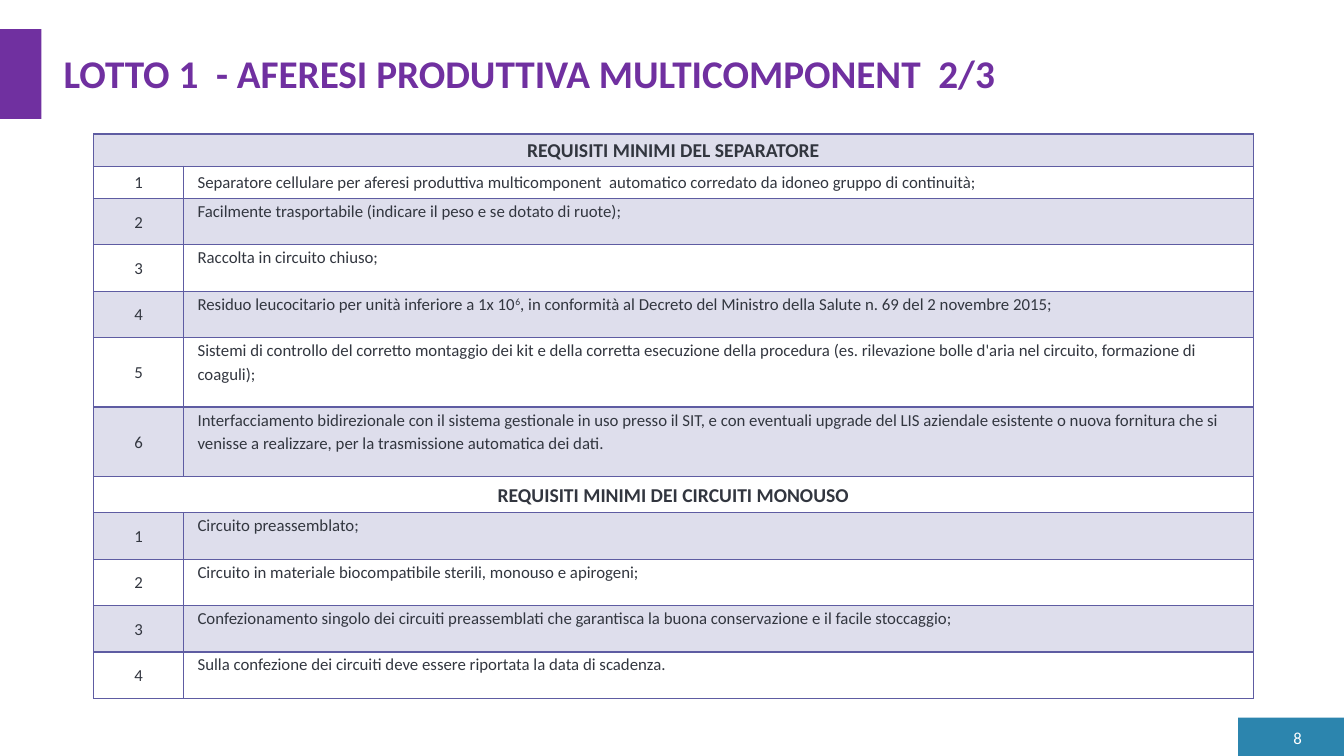
"""Builds the slide with the minimum requirements of lot 1."""
from dataclasses import dataclass

from lxml import etree
from pptx import Presentation
from pptx import util as u
from pptx.dml.color import RGBColor
from pptx.enum import shapes, text
from pptx.oxml.ns import qn

LEFT, CENTER, RIGHT = text.PP_ALIGN.LEFT, text.PP_ALIGN.CENTER, text.PP_ALIGN.RIGHT
TOP, MIDDLE = text.MSO_ANCHOR.TOP, text.MSO_ANCHOR.MIDDLE


@dataclass(frozen=True)
class Theme:
    font: str = "Calibri"
    accent: str = "7030A0"
    footer: str = "2C85AE"
    ink: str = "32363F"
    grid: str = "5E5CA2"
    white: str = "FFFFFF"
    band_alpha: int = 20
    title_size: int = 28
    heading_size: int = 14
    body_size: int = 12


SECTIONS = [
    ("REQUISITI MINIMI DEL SEPARATORE", 0.32, [
        ("Separatore cellulare per aferesi produttiva multicomponent  automatico corredato da idoneo gruppo di continuità;", 0.32),
        ("Facilmente trasportabile (indicare il peso e se dotato di ruote);", 0.46),
        ("Raccolta in circuito chiuso;", 0.46),
        ("Residuo leucocitario per unità inferiore a 1x 10^6^, in conformità al Decreto del Ministro della Salute n. 69 del 2 novembre 2015;", 0.46),
        ("Sistemi di controllo del corretto montaggio dei kit e della corretta esecuzione della procedura (es. rilevazione bolle d'aria nel circuito, formazione di coaguli);", 0.69),
        ("Interfacciamento bidirezionale con il sistema gestionale in uso presso il SIT, e con eventuali upgrade del LIS aziendale esistente o nuova fornitura che si venisse a realizzare, per la trasmissione automatica dei dati.", 0.69),
    ]),
    ("REQUISITI MINIMI DEI CIRCUITI MONOUSO", 0.36, [
        ("Circuito preassemblato;", 0.46),
        ("Circuito in materiale biocompatibile sterili, monouso e apirogeni;", 0.46),
        ("Confezionamento singolo dei circuiti preassemblati che garantisca la buona conservazione e il facile stoccaggio;", 0.46),
        ("Sulla confezione dei circuiti deve essere riportata la data di scadenza.", 0.46),
    ]),
]


def write(frame, content, *, font, size, color, bold=False, align=LEFT,
          spacing=1.0, after=0, indent=0):
    """Fill a frame with one paragraph; text between carets is superscript."""
    paragraph = frame.paragraphs[0]
    paragraph.alignment = align
    paragraph.line_spacing = spacing
    paragraph.space_before = u.Pt(0)
    paragraph.space_after = u.Pt(after)
    paragraph._p.get_or_add_pPr().set("marL", str(u.Inches(indent)))
    for position, piece in enumerate(content.split("^")):
        run = paragraph.add_run()
        run.text = piece
        run.font.name = font
        run.font.size = u.Pt(size)
        run.font.bold = bold
        run.font.color.rgb = RGBColor.from_string(color)
        if position % 2:
            run._r.get_or_add_rPr().set("baseline", "30000")


class SlideBuilder:
    """Holds the theme and the current slide and adds its elements."""

    def __init__(self, deck, theme):
        self.theme = theme
        self.slide = deck.slides.add_slide(deck.slide_layouts[5])

    def block(self, left, top, width, height, color):
        """Add a plain filled rectangle."""
        rectangle = self.slide.shapes.add_shape(
            shapes.MSO_SHAPE.RECTANGLE, *map(u.Inches, (left, top, width, height)))
        rectangle.shadow.inherit = False
        rectangle.fill.solid()
        rectangle.fill.fore_color.rgb = RGBColor.from_string(color)
        rectangle.line.fill.background()

    def title(self, content, left, top, width, height):
        """Place and format the title placeholder."""
        heading = self.slide.shapes.title
        heading.left, heading.top, heading.width, heading.height = map(
            u.Inches, (left, top, width, height))
        heading.text_frame.vertical_anchor = TOP
        heading.text_frame.word_wrap = True
        heading.text_frame.auto_size = text.MSO_AUTO_SIZE.SHAPE_TO_FIT_TEXT
        write(heading.text_frame, content, font=self.theme.font, bold=True,
              size=self.theme.title_size, color=self.theme.accent)

    def page_number(self, content, left, top, width, height):
        """Add the page number."""
        number = self.slide.shapes.add_textbox(
            *map(u.Inches, (left, top, width, height))).text_frame
        number.word_wrap = True
        number.vertical_anchor = MIDDLE
        write(number, content, font=self.theme.font, align=RIGHT,
              size=self.theme.body_size, color=self.theme.white)

    def cell(self, cell, content, banded, anchor=MIDDLE, **style):
        """Format one table cell with its fill, borders and text."""
        cell.margin_left = cell.margin_right = u.Inches(0.07)
        cell.margin_top = cell.margin_bottom = 0
        cell.vertical_anchor = anchor
        self.cell_box(cell, banded)
        style = {"size": self.theme.body_size, "spacing": 1.07, "after": 8} | style
        write(cell.text_frame, content, font=self.theme.font,
              color=self.theme.ink, **style)

    def cell_box(self, cell, banded):
        """Set the fill and the four borders of a cell."""
        properties = cell._tc.get_or_add_tcPr()
        if banded:
            cell.fill.solid()
            cell.fill.fore_color.rgb = RGBColor.from_string(self.theme.grid)
            tint = properties.find(".//" + qn("a:srgbClr"))
            etree.SubElement(tint, qn("a:alpha"), val=str(self.theme.band_alpha * 1000))
        else:
            cell.fill.background()
        for order, side in enumerate("LRTB"):
            border = etree.Element(qn(f"a:ln{side}"), w=str(u.Pt(1)))
            stroke = etree.SubElement(border, qn("a:solidFill"))
            etree.SubElement(stroke, qn("a:srgbClr"), val=self.theme.grid)
            properties.insert(order, border)

    def requirements(self, sections, left, top, columns):
        """Add the table of numbered requirements under their headings."""
        rows = []
        for heading, height, items in sections:
            rows.append((None, heading, height))
            rows += [(n, item, tall) for n, (item, tall) in enumerate(items, 1)]
        total = sum(height for *_, height in rows)
        table = self.slide.shapes.add_table(
            len(rows), len(columns),
            *map(u.Inches, (left, top, sum(columns), total))).table
        table.first_row = table.horz_banding = False
        for column, width in zip(table.columns, columns):
            column.width = u.Inches(width)
        for index, (number, content, height) in enumerate(rows):
            table.rows[index].height = u.Inches(height)
            banded = index % 2 == 0
            label, detail = table.cell(index, 0), table.cell(index, 1)
            if number is None:
                label.merge(detail)
                self.cell(label, content, banded, align=CENTER, bold=True,
                          size=self.theme.heading_size)
                self.cell_box(detail, banded)
                continue
            self.cell(label, str(number), banded, align=CENTER)
            if height < 0.4:
                self.cell(detail, content, banded, indent=0.07)
            else:
                self.cell(detail, content, banded, anchor=TOP, indent=0.07,
                          spacing=1.15, after=0)


def main():
    """Build and save the slide."""
    deck = Presentation()
    deck.slide_width, deck.slide_height = u.Inches(13.33), u.Inches(7.5)
    theme = Theme()
    page = SlideBuilder(deck, theme)
    page.block(12.28, 7.12, 1.05, 0.38, theme.footer)
    page.page_number("8", 12.6, 7.2, 0.41, 0.23)
    page.requirements(SECTIONS, 0.93, 1.33, (0.89, 10.61))
    page.title("LOTTO 1  - AFERESI PRODUTTIVA MULTICOMPONENT  2/3",
               0.53, 0.44, 10.01, 0.57)
    page.block(0, 0.29, 0.41, 0.89, theme.accent)
    deck.save("out.pptx")


if __name__ == "__main__":
    main()
